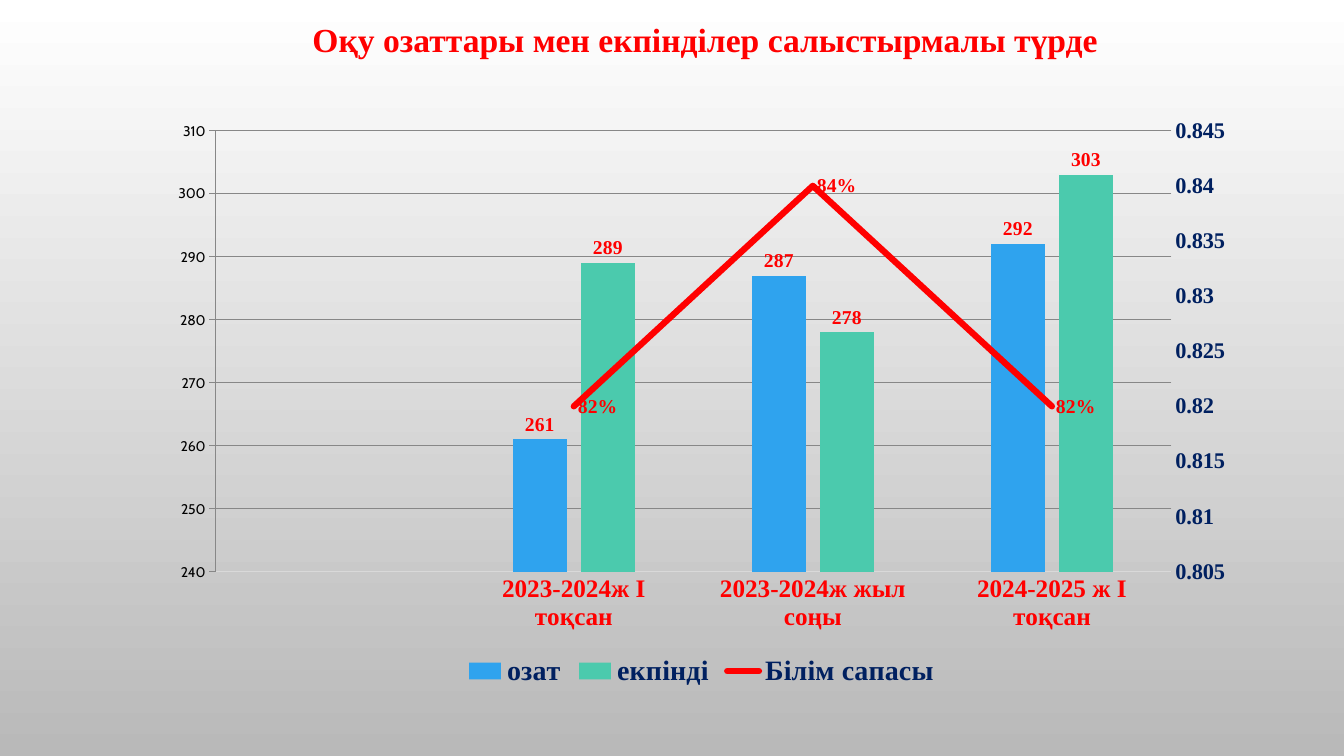
from pptx import Presentation
from pptx.chart.axis import ValueAxis
from pptx.chart.data import CategoryChartData as Data
from pptx.dml.color import RGBColor
from pptx.enum.chart import XL_CHART_TYPE as Kind, XL_LABEL_POSITION as Spot
from pptx.enum.chart import XL_LEGEND_POSITION as Side, XL_TICK_MARK as Tick
from pptx.enum.chart import XL_MARKER_STYLE as Mark
from pptx.enum.text import MSO_ANCHOR as Anchor, MSO_AUTO_SIZE as Fit, PP_ALIGN as Align
from pptx.oxml import parse_xml
from pptx.oxml.ns import nsdecls, qn
from pptx.util import Cm, Pt

RED = RGBColor(0xFF, 0x00, 0x00)
NAVY = RGBColor(0x00, 0x20, 0x60)
GREY = RGBColor(0x59, 0x59, 0x59)
PALE = RGBColor(0xD9, 0xD9, 0xD9)
BLUE = RGBColor(0x2F, 0xA3, 0xEE)
GREEN = RGBColor(0x4B, 0xCA, 0xAD)
WHITE = RGBColor(0xFF, 0xFF, 0xFF)
SHADE = RGBColor(0xB9, 0xB9, 0xB9)
BLACK = RGBColor(0, 0, 0)

LAYOUT = f"""<c:layout {nsdecls('c')}><c:manualLayout>
<c:layoutTarget val="inner"/><c:xMode val="edge"/><c:yMode val="edge"/>
<c:x val="0.054"/><c:y val="0.041"/><c:w val="0.877"/><c:h val="0.753"/>
</c:manualLayout></c:layout>"""
LINE = f"""<c:lineChart {nsdecls('c')}><c:grouping val="standard"/>
<c:varyColors val="0"/><c:marker val="1"/>
<c:axId val="5001"/><c:axId val="5002"/></c:lineChart>"""
RIGHT = f"""<c:valAx {nsdecls('c')}><c:axId val="5002"/>
<c:scaling><c:orientation val="minMax"/></c:scaling><c:delete val="0"/>
<c:axPos val="r"/><c:numFmt formatCode="General" sourceLinked="0"/>
<c:tickLblPos val="nextTo"/><c:crossAx val="5001"/><c:crosses val="max"/>
<c:crossBetween val="between"/></c:valAx>"""
HIDDEN = f"""<c:catAx {nsdecls('c')}><c:axId val="5001"/>
<c:scaling><c:orientation val="minMax"/></c:scaling><c:delete val="1"/>
<c:axPos val="b"/><c:crossAx val="5002"/><c:crosses val="autoZero"/></c:catAx>"""


class Deck:
    face = "Times New Roman"

    def __init__(self):
        self.prs = Presentation()
        self.prs.slide_width, self.prs.slide_height = Cm(33.87), Cm(19.05)
        self.slide = self.prs.slides.add_slide(self.prs.slide_layouts[5])

    def shade(self, top, base):
        fill = self.slide.background.fill
        fill.gradient()
        fill.gradient_angle = 270
        for stop, color, place in zip(fill.gradient_stops, (top, base), (0, 1)):
            stop.color.rgb, stop.position = color, place

    def style(self, font, size, color, bold=True, face=None):
        font.size, font.bold, font.name = Pt(size), bold, face or self.face
        font.color.rgb = color

    def put(self, para, text, align=Align.LEFT, **form):
        para.alignment = align
        run = para.add_run()
        run.text = text
        self.style(run.font, **form)

    def title(self, text, box, **form):
        shape = self.slide.shapes.title
        shape.left, shape.top, shape.width, shape.height = map(Cm, box)
        frame = shape.text_frame
        frame.word_wrap, frame.auto_size = True, Fit.SHAPE_TO_FIT_TEXT
        frame.vertical_anchor = Anchor.TOP
        self.put(frame.paragraphs[0], text, **form)

    def axis(self, axis, size, color, span=None, grid=False, rule=False):
        axis.major_tick_mark = axis.minor_tick_mark = Tick.NONE
        axis.has_major_gridlines = grid
        self.style(axis.tick_labels.font, size, color)
        if span:
            axis.minimum_scale, axis.maximum_scale, axis.major_unit = span
        lines = [axis.major_gridlines.format.line] if grid else []
        if rule:
            lines.append(axis.format.line)
        else:
            axis.format.line.fill.background()
        for line in lines:
            line.color.rgb, line.width = PALE, Pt(0.75)

    def labels(self, series, spot, code="General"):
        tags = series.data_labels
        tags.show_value, tags.position = True, spot
        tags.number_format, tags.number_format_is_linked = code, False
        self.style(tags.font, 14, RED)

    def split(self, chart):
        """Move the last series to a line plot on its own right axis."""
        bars = chart.plots[0]
        area = chart.value_axis._element.getparent()
        for old in area.findall(qn("c:layout")):
            area.remove(old)
        area.insert(0, parse_xml(LAYOUT))
        row = list(bars.series)[-1]._element
        for flip in row.findall(qn("c:invertIfNegative")):
            row.remove(flip)
        line = parse_xml(LINE)
        line.insert(2, row)
        area.find(qn("c:barChart")).addnext(line)
        right = parse_xml(RIGHT)
        chart.value_axis._element.addnext(right)
        right.addnext(parse_xml(HIDDEN))
        return ValueAxis(right)

    def chart(self, cats, rows, box):
        data = Data()
        data.categories = cats
        for name, vals in rows:
            data.add_series(name, vals)
        chart = self.slide.shapes.add_chart(
            Kind.COLUMN_CLUSTERED, *map(Cm, box), data).chart
        self.style(chart.font, 10, BLACK, bold=False, face="Cabin")
        chart.has_title = False
        right = self.split(chart)

        # Axes
        self.axis(chart.category_axis, 18, RED, rule=True)
        self.axis(chart.value_axis, 16, GREY, (240, 310, 10), grid=True)
        self.axis(right, 16, NAVY, (0.805, 0.845, 0.005))

        # Columns and line
        bars, trend = chart.plots
        bars.gap_width, bars.overlap = 219, -27
        bars.vary_by_categories = False
        for series, color in zip(bars.series, (BLUE, GREEN)):
            series.format.fill.solid()
            series.format.fill.fore_color.rgb = color
            self.labels(series, Spot.OUTSIDE_END)
        curve = trend.series[0]
        curve.smooth = False
        curve.marker.style = Mark.NONE
        curve.format.line.color.rgb, curve.format.line.width = RED, Pt(4.5)
        curve._element.find(".//" + qn("a:ln")).set("cap", "rnd")
        self.labels(curve, Spot.RIGHT, "0%")

        # Legend
        chart.has_legend = True
        chart.legend.position = Side.BOTTOM
        chart.legend.include_in_layout = False
        self.style(chart.legend.font, 20, NAVY)


def main():
    deck = Deck()
    deck.shade(WHITE, SHADE)
    deck.title("Оқу озаттары мен екпінділер салыстырмалы түрде",
               (7.62, 0.36, 21.54, 1.27), size=24, color=RED)
    deck.chart(
        ("", "2023-2024ж І тоқсан", "2023-2024ж жыл соңы", "2024-2025 ж І тоқсан"),
        (("озат", (None, 261, 287, 292)),
         ("екпінді", (None, 289, 278, 303)),
         ("Білім сапасы", (None, 0.82, 0.84, 0.82))),
        (3.94, 2.69, 27.48, 14.76))
    deck.prs.save("out.pptx")


if __name__ == "__main__":
    main()
